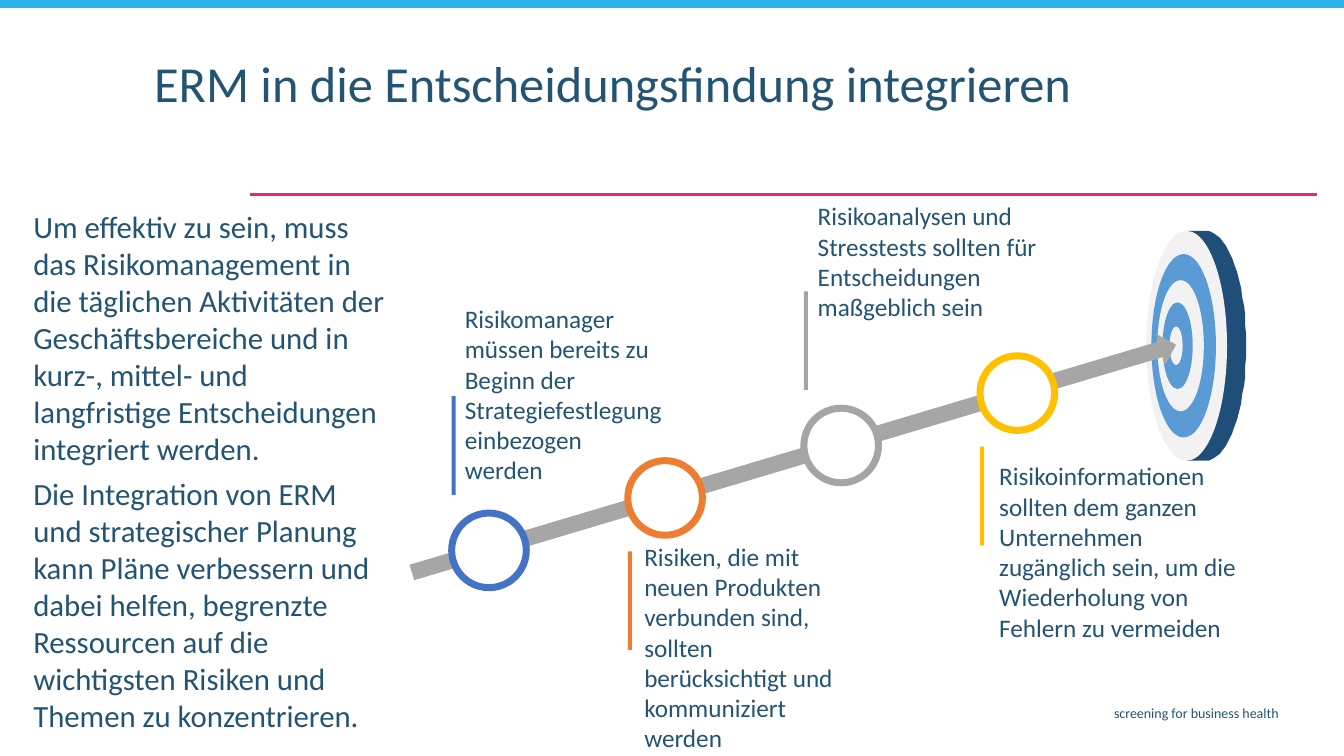
import math

import pptx
import pptx.dml.color
import pptx.enum.shapes
import pptx.enum.text
import pptx.oxml
import pptx.oxml.ns
import pptx.util

SHAPES = pptx.enum.shapes.MSO_SHAPE
ALIGN = pptx.enum.text.PP_ALIGN
PX = 9144  # 100 px to the inch
SLIDE_WIDTH, SLIDE_HEIGHT = 1333, 750

COLORS = {
    "text": "245473", "band": "29B3E8", "rule": "EC2179",
    "rim": "1F4E79", "ring_light": "F2F2F2", "ring_blue": "5B9BD5",
    "arrow": "A6A6A6", "white": "FFFFFF", "blue": "4472C4",
    "orange": "ED7D31", "gray": "A5A5A5", "yellow": "FFC000",
}

TITLE = "ERM in die Entscheidungsfindung integrieren"
FOOTER = "screening for business health"
INTRO = [
    "Um effektiv zu sein, muss das Risikomanagement in die täglichen Aktivitäten der "
    "Geschäftsbereiche und in kurz-, mittel- und langfristige Entscheidungen integriert werden.",
    "Die Integration von ERM und strategischer Planung kann Pläne verbessern und dabei helfen, "
    "begrenzte Ressourcen auf die wichtigsten Risiken und Themen zu konzentrieren.",
]

# color, side of the arrow, text box (left, top, width, height), text
MILESTONES = [
    ("blue", "above", (457, 299, 207, 155),
     "Risikomanager müssen bereits zu Beginn der Strategiefestlegung einbezogen werden"),
    ("orange", "below", (635, 535, 223, 186),
     "Risiken, die mit neuen Produkten verbunden sind, sollten berücksichtigt und "
     "kommuniziert werden"),
    ("gray", "above", (807, 197, 231, 125),
     "Risikoanalysen und Stresstests sollten für Entscheidungen maßgeblich sein"),
    ("yellow", "below", (987, 455, 249, 186),
     "Risikoinformationen sollten dem ganzen Unternehmen zugänglich sein, um die "
     "Wiederholung von Fehlern zu vermeiden"),
]
FIRST_CIRCLE = (448, 509)
LAST_CIRCLE_LEFT = 972
CIRCLE_RISE = 52
CIRCLE_SIZE = 74
BAR_WIDTH, BAR_HEIGHT = 4, 98
BAR_OFFSET = {"above": -116, "below": 90}

TARGET_MIDDLE = 343
RINGS = [(1137, 80, 228), (1142, 64, 182), (1148, 46, 130), (1153, 30, 86), (1160, 13, 38)]
RIM_LEFT, RIM_CENTER = 1177, 1196

presentation = pptx.Presentation()
presentation.slide_width = SLIDE_WIDTH * PX
presentation.slide_height = SLIDE_HEIGHT * PX
slide = presentation.slides.add_slide(presentation.slide_layouts[6])


def rgb(color):
    return pptx.dml.color.RGBColor.from_string(COLORS[color])


def paint(shape, fill, outline=None):
    shape.shadow.inherit = False
    shape.fill.solid()
    shape.fill.fore_color.rgb = rgb(fill)
    if outline:
        shape.line.color.rgb = rgb(outline)
        shape.line.width = pptx.util.Pt(5)
    else:
        shape.line.fill.background()


def add_shape(kind, box, fill, outline=None):
    shape = slide.shapes.add_shape(kind, *(round(length * PX) for length in box))
    paint(shape, fill, outline)
    return shape


def add_text(box, paragraphs, size, insets=(10, 5), align=ALIGN.LEFT, line_spacing=None):
    """Insets are (left and right, top and bottom)."""
    frame = slide.shapes.add_textbox(*(length * PX for length in box)).text_frame
    frame.word_wrap = True
    frame.margin_left = frame.margin_right = insets[0] * PX
    frame.margin_top = frame.margin_bottom = insets[1] * PX
    for index, text in enumerate(paragraphs):
        paragraph = frame.add_paragraph() if index else frame.paragraphs[0]
        paragraph.text = text
        paragraph.alignment = align
        paragraph.line_spacing = line_spacing
        if index:
            paragraph.space_before = pptx.util.Pt(6)
        paragraph.font.name = "Calibri"
        paragraph.font.size = pptx.util.Pt(size)
        paragraph.font.color.rgb = rgb("text")


def add_target():
    face_height = RINGS[0][2]
    rim_width = RINGS[0][1] / 2
    arc = []
    for degrees in range(-90, 91, 5):
        angle = math.radians(degrees)
        arc.append((RIM_CENTER + rim_width * math.cos(angle),
                    TARGET_MIDDLE + face_height / 2 * math.sin(angle)))
    top, bottom = arc[0][1], arc[-1][1]
    outline = slide.shapes.build_freeform(RIM_LEFT, top, scale=PX)
    outline.add_line_segments(arc + [(RIM_LEFT, bottom)], close=True)
    paint(outline.convert_to_shape(), "rim")
    for index, (left, width, height) in enumerate(RINGS):
        add_shape(SHAPES.OVAL, (left, TARGET_MIDDLE - height / 2, width, height),
                  "ring_blue" if index % 2 else "ring_light")


def add_milestones():
    step = (LAST_CIRCLE_LEFT - FIRST_CIRCLE[0]) / (len(MILESTONES) - 1)
    for index, (color, side, text_box, text) in enumerate(MILESTONES):
        left = FIRST_CIRCLE[0] + index * step
        top = FIRST_CIRCLE[1] - index * CIRCLE_RISE
        add_shape(SHAPES.OVAL, (left, top, CIRCLE_SIZE, CIRCLE_SIZE), "white", color)
        add_shape(SHAPES.RECTANGLE, (left, top + BAR_OFFSET[side], BAR_WIDTH, BAR_HEIGHT), color)
        add_text(text_box, [text], 18, insets=(4, 2))


rule = slide.shapes.add_connector(pptx.enum.shapes.MSO_CONNECTOR.STRAIGHT,
                                  248 * PX, 193 * PX, 1306 * PX, 193 * PX)
rule.line.color.rgb = rgb("rule")
rule.line.width = pptx.util.Pt(1.5)
rule._element.spPr.append(pptx.oxml.parse_xml(
    "<a:effectLst %s/>" % pptx.oxml.ns.nsdecls("a")))

add_shape(SHAPES.RECTANGLE, (0, -2, SLIDE_WIDTH, 10), "band")
add_text((365, 694, 913, 29), [FOOTER], 10, align=ALIGN.RIGHT)
add_text((143, 54, 968, 76), [TITLE], 36, line_spacing=0.9)
add_text((24, 202, 368, 536), INTRO, 22, insets=(9, 4))
add_target()
arrow = add_shape(SHAPES.RIGHT_ARROW, (392, 439, 791, 32), "arrow")
arrow.rotation = 343.4
add_milestones()

presentation.save("out.pptx")
